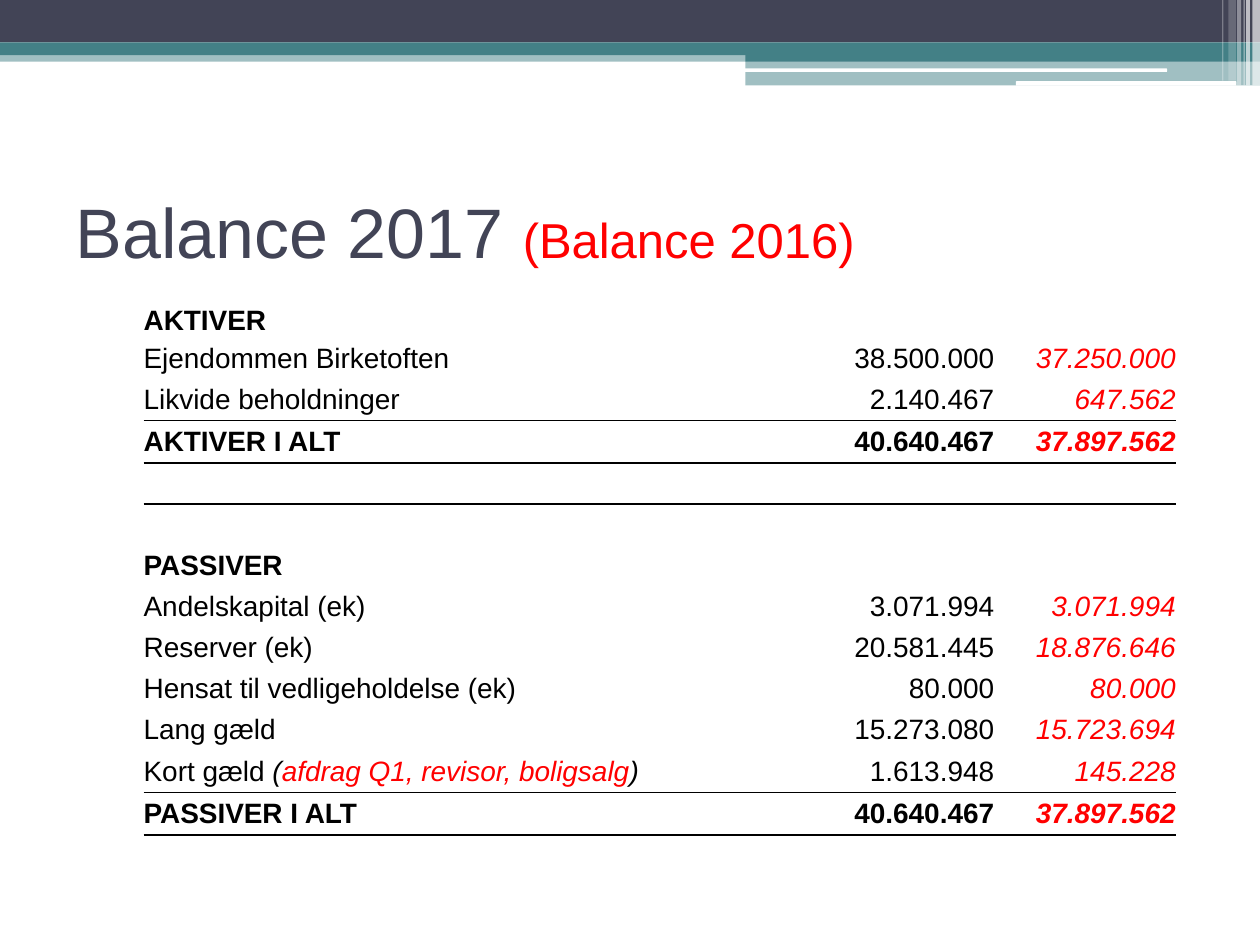
from lxml import etree
from pptx import Presentation
from pptx import util as u
from pptx.dml.color import RGBColor
from pptx.enum import shapes, text
from pptx.oxml import ns

Pt = u.Pt
COLORS = {"navy": "424456", "teal": "438086", "white": "FFFFFF", "black": "000000", "red": "FF0000"}
NO_STYLE = "{2D5ABB26-0587-4C30-8999-92F81FD0307C}"

BANDS = [
    ("rect", 0, 28.8, 720, 6.5, "teal", 50),
    ("rect", 0, 0, 720, 24.3, "navy", 100),
    ("rect", 0, 24.3, 720, 7.2, "teal", 100),
    ("rect", 426, 28, 294, 7.2, "teal", 100),
    ("rect", 426, 35.2, 294, 13.6, "teal", 50),
    ("round", 425.5, 39.1, 241.4, 2, "white", 100),
    ("round", 580.5, 46.4, 126, 2.6, "white", 100),
]
STRIPES = [
    (715.7, 4.3, 48.8, 65), (712.1, 2.2, 48.8, 65), (710.6, 0.7, 48.8, 60),
    (707, 2.2, 48.8, 40), (702, 4.3, 46.1, 20), (698.4, 0.7, 46.1, 30),
]

DEBT_LABEL = [
    ("Kort gæld ", {}),
    ("(", {"italic": True}),
    ("afdrag Q1, revisor, boligsalg", {"italic": True, "color": "red"}),
    (")", {"italic": True}),
]
ROWS = [
    ("heading", "AKTIVER", "", ""),
    ("item", "Ejendommen Birketoften", "38.500.000", "37.250.000"),
    ("last", "Likvide beholdninger", "2.140.467", "647.562"),
    ("total", "AKTIVER I ALT", "40.640.467", "37.897.562"),
    ("after", "", "", ""),
    ("item", "", "", ""),
    ("heading", "PASSIVER", "", ""),
    ("item", "Andelskapital (ek)", "3.071.994", "3.071.994"),
    ("item", "Reserver (ek)", "20.581.445", "18.876.646"),
    ("item", "Hensat til vedligeholdelse (ek)", "80.000", "80.000"),
    ("item", "Lang gæld", "15.273.080", "15.723.694"),
    ("last", DEBT_LABEL, "1.613.948", "145.228"),
    ("total", "PASSIVER I ALT", "40.640.467", "37.897.562"),
    ("after", "", "", ""),
]
RULES = {"last": {"b": 0.5}, "total": {"t": 0.5, "b": 1}, "after": {"t": 1}}
COL_WIDTHS = (316.8, 169.2, 103.7)
FIRST_ROW, TOTAL_ROW, ROW = 17.5, 24.5, 23.5


def rgb(name):
    """Return the named colour."""
    return RGBColor.from_string(COLORS[name])


def add_run(p, content, size=16, color="black", bold=False, italic=False):
    """Add formatted text to a paragraph."""
    r = p.add_run()
    r.text = content
    f = r.font
    f.name, f.size, f.bold, f.italic = "Arial", Pt(size), bold, italic
    f.color.rgb = rgb(color)


def add_bar(s, kind, left, top, width, height, color, opacity):
    """Add a borderless bar with the given opacity in percent."""
    preset = shapes.MSO_SHAPE.ROUNDED_RECTANGLE if kind == "round" else shapes.MSO_SHAPE.RECTANGLE
    sp = s.shapes.add_shape(preset, Pt(left), Pt(top), Pt(width), Pt(height))
    sp.shadow.inherit = False
    sp.line.fill.background()
    sp.fill.solid()
    sp.fill.fore_color.rgb = rgb(color)
    if opacity < 100:
        clr = sp.fill._xPr.find(".//" + ns.qn("a:srgbClr"))
        etree.SubElement(clr, ns.qn("a:alpha"), val=str(opacity * 1000))


def add_title(s):
    """Fill and place the title placeholder."""
    sp = s.shapes.title
    sp.left, sp.top, sp.width, sp.height = Pt(36), Pt(90), Pt(648), Pt(84)
    tf = sp.text_frame
    tf.auto_size = text.MSO_AUTO_SIZE.NONE
    tf.vertical_anchor = text.MSO_ANCHOR.MIDDLE
    p = tf.paragraphs[0]
    p.alignment = text.PP_ALIGN.LEFT
    add_run(p, "Balance 2017 ", size=40, color="navy")
    add_run(p, "(Balance 2016)", size=28, color="red")


def add_rule(cell, side, width):
    """Draw a black line on the top (t) or bottom (b) of a cell."""
    ln = etree.SubElement(cell._tc.get_or_add_tcPr(), ns.qn("a:ln" + side.upper()), w=str(int(Pt(width))))
    fill = etree.SubElement(ln, ns.qn("a:solidFill"))
    etree.SubElement(fill, ns.qn("a:srgbClr"), val=COLORS["black"])


def fill_cell(cell, content, col, kind):
    """Write one cell of the balance and rule it."""
    cell.margin_left = cell.margin_right = cell.margin_top = cell.margin_bottom = 0
    cell.vertical_anchor = text.MSO_ANCHOR.MIDDLE
    for side, width in RULES.get(kind, {}).items():
        add_rule(cell, side, width)
    cell.fill.background()
    p = cell.text_frame.paragraphs[0]
    if col:
        p.alignment = text.PP_ALIGN.RIGHT
    if not content:
        p._p.get_or_add_endParaRPr().set("sz", "1600")
    elif isinstance(content, list):
        for part, fmt in content:
            add_run(p, part, **fmt)
    else:
        add_run(p, content, color="red" if col == 2 else "black",
                bold=kind in ("heading", "total"), italic=col == 2)


def add_balance(s):
    """Add the balance table."""
    heights = [TOTAL_ROW if row[0] == "total" else ROW for row in ROWS]
    heights[0] = FIRST_ROW
    frame = s.shapes.add_table(len(ROWS), len(COL_WIDTHS), Pt(82.1), Pt(173.5),
                               Pt(sum(COL_WIDTHS)), Pt(sum(heights)))
    tbl = frame.table
    tbl.first_row = tbl.horz_banding = False
    tbl._tbl.tblPr.find(ns.qn("a:tableStyleId")).text = NO_STYLE
    for column, width in zip(tbl.columns, COL_WIDTHS):
        column.width = Pt(width)
    for i, (kind, *contents) in enumerate(ROWS):
        tbl.rows[i].height = Pt(heights[i])
        for col, content in enumerate(contents):
            fill_cell(tbl.cell(i, col), content, col, kind)


def main():
    """Build the balance slide."""
    prs = Presentation()
    prs.slide_width, prs.slide_height = Pt(720), Pt(540)
    s = prs.slides.add_slide(prs.slide_layouts[5])
    for band in BANDS:
        add_bar(s, *band)
    for left, width, height, opacity in STRIPES:
        add_bar(s, "rect", left, 0, width, height, "white", opacity)
    add_title(s)
    add_balance(s)
    prs.save("out.pptx")


if __name__ == "__main__":
    main()
